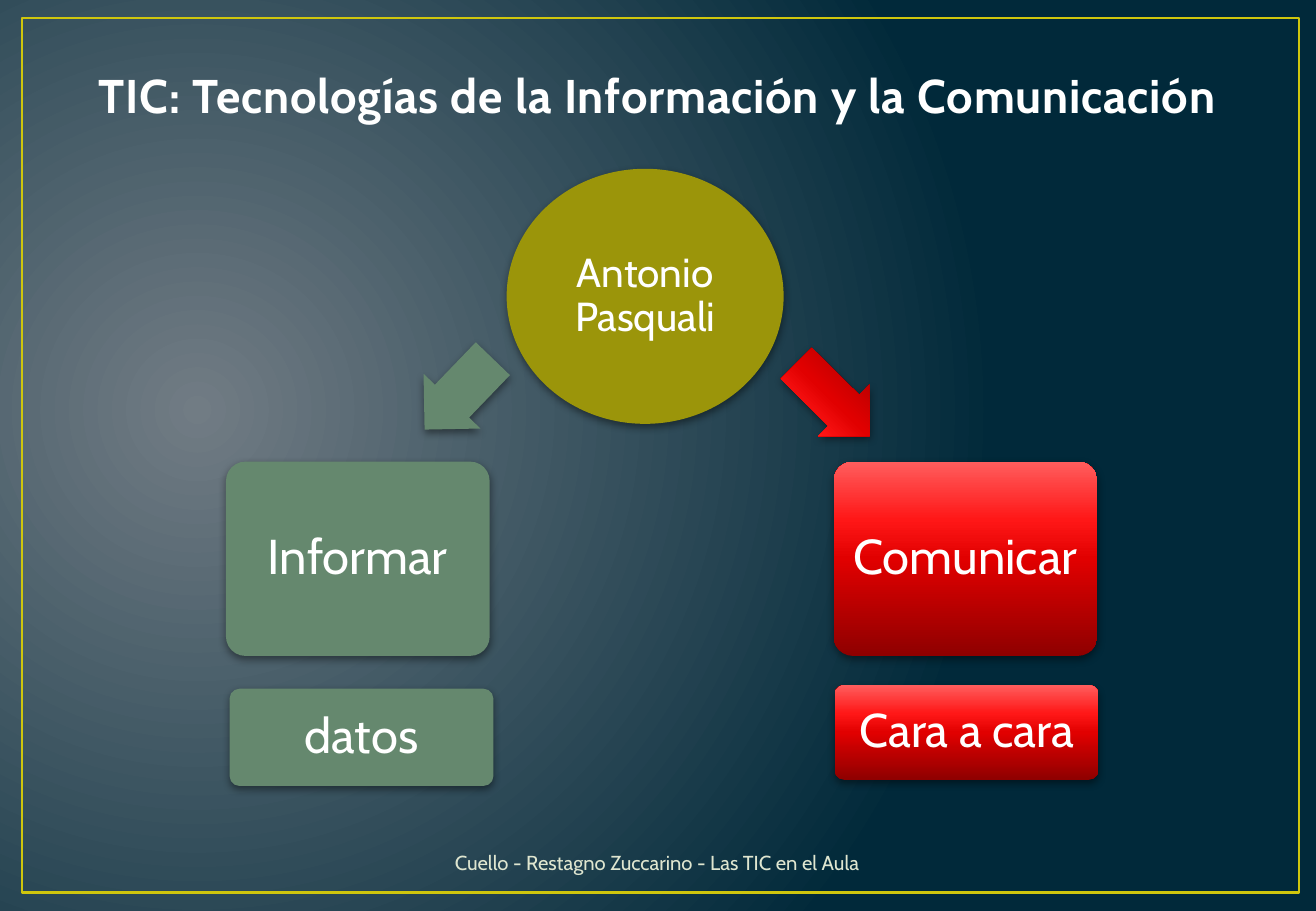
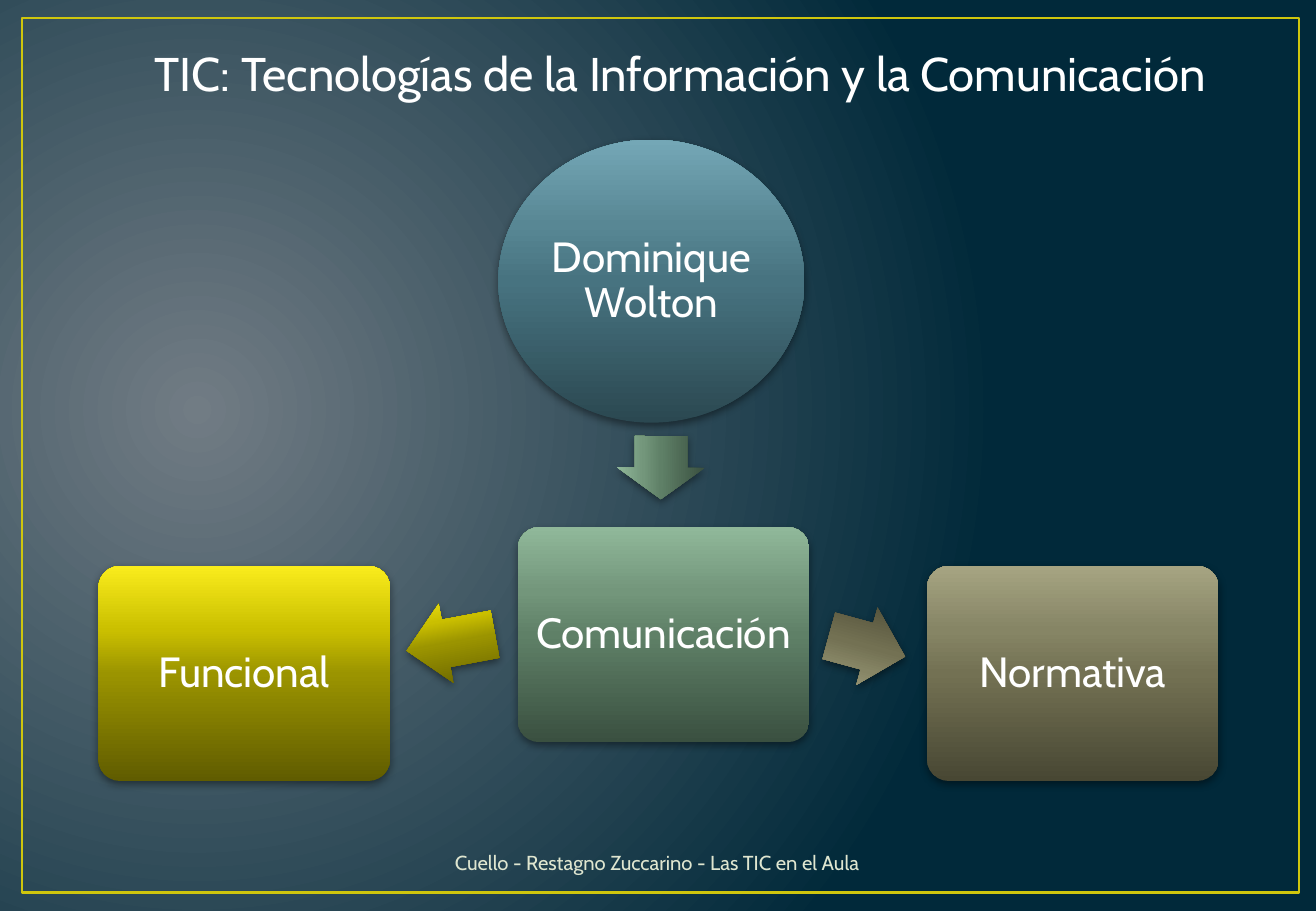
from lxml import etree
from pptx import Presentation
from pptx.dml.color import RGBColor
from pptx.enum.shapes import MSO_SHAPE
from pptx.enum.text import MSO_ANCHOR, PP_ALIGN
from pptx.oxml.ns import qn
from pptx.util import Inches, Pt

ELLIPSE, CARD = MSO_SHAPE.OVAL, MSO_SHAPE.ROUNDED_RECTANGLE
ARROW, RECTANGLE = MSO_SHAPE.LEFT_ARROW, MSO_SHAPE.RECTANGLE
MIDDLE, BOTTOM = MSO_ANCHOR.MIDDLE, MSO_ANCHOR.BOTTOM
CENTER = PP_ALIGN.CENTER

WIDTH, HEIGHT = Inches(10.83), Inches(7.5)
FONT = "Cabin"
TITLE = "TIC: Tecnologías de la Información y la Comunicación"
FOOTER = "Cuello - Restagno Zuccarino - Las TIC en el Aula"

WHITE = RGBColor(0xFF, 0xFF, 0xFF)
BLACK = RGBColor(0x00, 0x00, 0x00)
FRAME = RGBColor(0xCF, 0xC6, 0x0D)
FOOTER_TEXT = RGBColor(0xDF, 0xE6, 0xD0)
GLOW = RGBColor(0x71, 0x7C, 0x84)
NIGHT = RGBColor(0x01, 0x29, 0x3A)
OLIVE = RGBColor(0x9B, 0x95, 0x0A)
SAGE = RGBColor(0x65, 0x88, 0x6E)

# Gradients run from the bottom of a shape to its top.
STOPS = (0, 50, 70, 100)
RED = (RGBColor(0x8F, 0x00, 0x00), RGBColor(0xE1, 0x00, 0x00),
       RGBColor(0xFF, 0x17, 0x17), RGBColor(0xFF, 0x5D, 0x5D))
TEAL = (RGBColor(0x2B, 0x48, 0x51), RGBColor(0x47, 0x73, 0x80),
        RGBColor(0x58, 0x87, 0x94), RGBColor(0x74, 0xA7, 0xB6))
YELLOW = (RGBColor(0x60, 0x5C, 0x00), RGBColor(0x9B, 0x94, 0x00),
          RGBColor(0xCA, 0xBF, 0x00), RGBColor(0xF9, 0xEC, 0x1C))
KHAKI = (RGBColor(0x48, 0x47, 0x33), RGBColor(0x73, 0x71, 0x53),
         RGBColor(0x86, 0x85, 0x65), RGBColor(0xA6, 0xA4, 0x82))
GREEN = (RGBColor(0x3A, 0x50, 0x40), RGBColor(0x5F, 0x80, 0x67),
         RGBColor(0x73, 0x96, 0x7B), RGBColor(0x90, 0xB8, 0x9A))


def place(left, top, width, height):
    """Turn percentages of the slide into lengths."""
    return (round(WIDTH * left / 100), round(HEIGHT * top / 100),
            round(WIDTH * width / 100), round(HEIGHT * height / 100))


def add_node(parent, tag, **attributes):
    """Append a DrawingML element."""
    texts = {key: str(value) for key, value in attributes.items()}
    return etree.SubElement(parent, qn(f"a:{tag}"), texts)


def write_stops(gradient, colours, positions):
    """Replace the content of a gradient by the given stops."""
    gradient.clear()
    gradient.set("rotWithShape", "1")
    stops = add_node(gradient, "gsLst")
    for colour, position in zip(colours, positions):
        stop = add_node(stops, "gs", pos=position * 1000)
        add_node(stop, "srgbClr", val=colour)


def paint(shape, colours):
    """Fill a shape with one colour or a vertical gradient."""
    if isinstance(colours, RGBColor):
        shape.fill.solid()
        shape.fill.fore_color.rgb = colours
        return
    shape.fill.gradient()
    gradient = shape.element.spPr.find(qn("a:gradFill"))
    write_stops(gradient, colours, STOPS)
    add_node(gradient, "lin", ang=270 * 60000, scaled=0)


def cast_shadow(shape):
    """Give a shape a soft shadow below it."""
    shape.shadow.inherit = False
    effects = shape.element.spPr.find(qn("a:effectLst"))
    shadow = add_node(effects, "outerShdw", blurRad=Pt(5), dist=Pt(2),
                      dir=90 * 60000, rotWithShape=0)
    colour = add_node(shadow, "srgbClr", val=BLACK)
    add_node(colour, "alpha", val=43000)


def write(shape, text, size, colour=WHITE, anchor=MIDDLE, inset=None):
    """Write one centred paragraph and return it."""
    frame = shape.text_frame
    frame.word_wrap = True
    frame.vertical_anchor = anchor
    if inset is not None:
        frame.margin_left = frame.margin_right = Inches(inset)
        frame.margin_top = frame.margin_bottom = Inches(inset)
    paragraph = frame.paragraphs[0]
    paragraph.text = text
    paragraph.alignment = CENTER
    paragraph.font.name = FONT
    paragraph.font.size = Pt(size)
    paragraph.font.color.rgb = colour
    return paragraph


def add_block(slide, kind, area, colours):
    """Add a borderless shape with a shadow."""
    block = slide.shapes.add_shape(kind, *place(*area))
    paint(block, colours)
    block.line.fill.background()
    cast_shadow(block)
    return block


def add_author(slide, area, colours, name, size):
    """Add the ellipse that names the author."""
    author = add_block(slide, ELLIPSE, area, colours)
    write(author, name, size, inset=0.02).line_spacing = 0.9


def add_card(slide, area, colours, idea, size, inset):
    """Add a rounded card holding one idea."""
    card = add_block(slide, CARD, area, colours)
    card.adjustments[0] = 0.1
    write(card, idea, size, inset=inset).line_spacing = 0.9


def add_arrow(slide, area, colours, rotation):
    """Add a block arrow turned from its leftward direction."""
    arrow = add_block(slide, ARROW, area, colours)
    arrow.adjustments[0], arrow.adjustments[1] = 0.6, 0.5
    arrow.rotation = rotation


def add_label(slide, area, text, size, colour=WHITE, anchor=MIDDLE):
    """Add free text and return its paragraph."""
    label = slide.shapes.add_textbox(*place(*area))
    return write(label, text, size, colour, anchor)


def set_background(master):
    """Paint the glow that all slides share."""
    master.background.fill.gradient()
    gradient = master.element.xpath(".//p:bg//a:gradFill")[0]
    write_stops(gradient, (GLOW, NIGHT), (0, 100))
    circle = add_node(gradient, "path", path="circle")
    add_node(circle, "fillToRect", l=15000, t=50000, r=85000, b=60000)


def add_slide(deck, title_area, anchor):
    """Start a slide with frame, title and footer; return it and its title."""
    slide = deck.slides.add_slide(deck.slide_layouts[6])
    frame = slide.shapes.add_shape(RECTANGLE, *place(1.66, 2, 97.04, 96))
    frame.shadow.inherit = False
    frame.fill.background()
    frame.line.color.rgb = FRAME
    frame.line.width = Pt(1.5)
    title = add_label(slide, title_area, TITLE, 28, anchor=anchor)
    add_label(slide, (30.93, 92, 38.04, 5.33), FOOTER, 12, FOOTER_TEXT)
    return slide, title


def build_pasquali(deck):
    """Contrast informing with communicating."""
    slide, title = add_slide(deck, (5, 5.87, 90, 8.27), BOTTOM)
    title.font.bold = True
    title.runs[0].font._element.set("spc", "50")
    add_author(slide, (38.5, 18.53, 21.05, 28), OLIVE, "Antonio Pasquali", 24)
    add_arrow(slide, (31.12, 38.93, 7.48, 8.67), SAGE, 313.9)
    add_arrow(slide, (59.37, 39.87, 7.85, 8), RED, 224.8)
    for left, top, height, colours, idea, size in (
            (17.17, 50.67, 21.33, SAGE, "Informar", 29),
            (63.34, 50.67, 21.33, RED, "Comunicar", 29),
            (17.45, 75.6, 10.67, SAGE, "datos", 29),
            (63.43, 75.2, 10.4, RED, "Cara a cara", 28)):
        add_card(slide, (left, top, 20.04, height), colours, idea, size, 0.06)


def build_wolton(deck):
    """Split communication into functional and normative."""
    slide, _ = add_slide(deck, (6.65, -0.4, 90, 16.67), MIDDLE)
    add_author(slide, (37.86, 15.33, 23.27, 31.07), TEAL, "Dominique Wolton", 25)
    add_arrow(slide, (30.84, 66.13, 6.83, 8.8), YELLOW, 349.4)
    add_arrow(slide, (62.88, 66.53, 6, 8.8), KHAKI, 195.3)
    add_arrow(slide, (47.83, 46.53, 4.8, 9.6), GREEN, 270.3)
    for left, top, colours, idea in (
            (7.48, 62.13, YELLOW, "Funcional"),
            (70.45, 62.13, KHAKI, "Normativa"),
            (39.34, 57.87, GREEN, "Comunicación")):
        add_card(slide, (left, top, 22.16, 23.6), colours, idea, 25, 0.05)


def main():
    """Build and save the deck."""
    deck = Presentation()
    deck.slide_width, deck.slide_height = WIDTH, HEIGHT
    set_background(deck.slide_master)
    build_pasquali(deck)
    build_wolton(deck)
    deck.save("out.pptx")


main()
